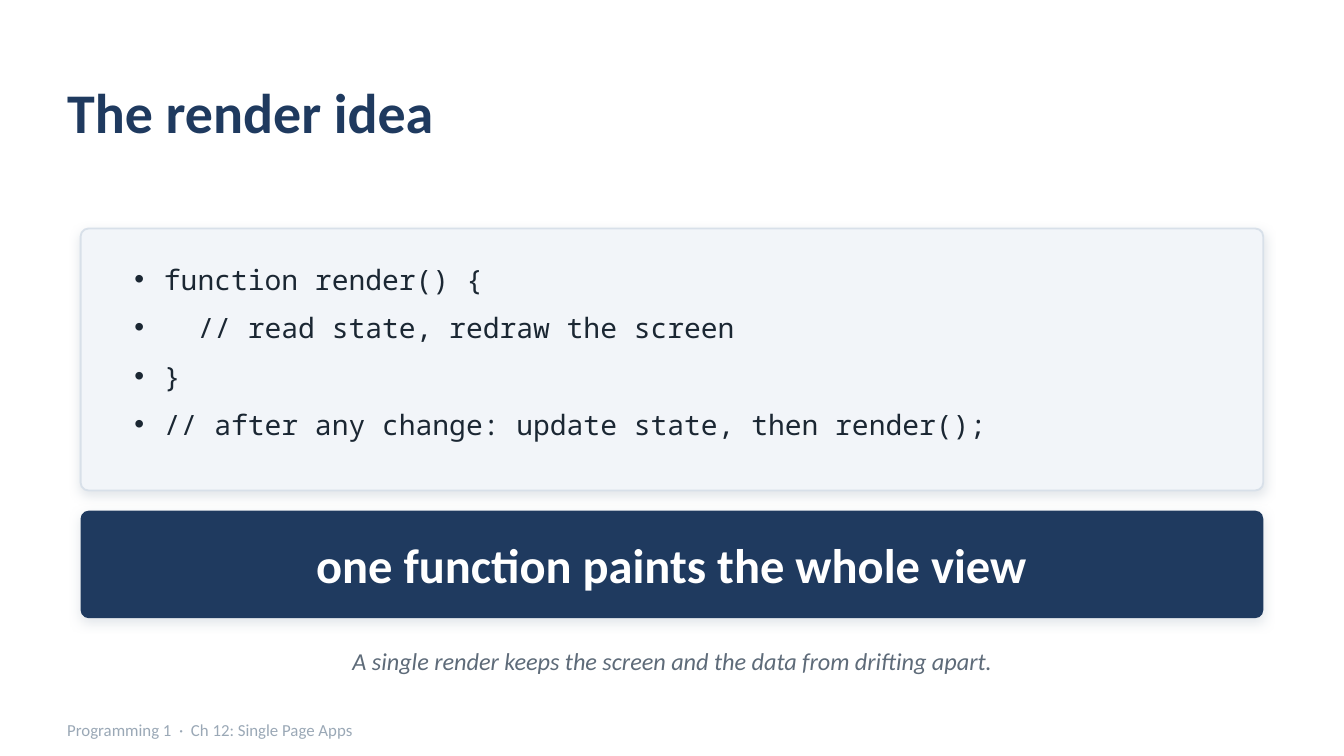
"""Build the slide that explains the idea of a single render function."""
from lxml.etree import SubElement
from pptx import Presentation
from pptx.dml.color import RGBColor
from pptx.enum.shapes import MSO_SHAPE
from pptx.enum.text import MSO_ANCHOR, MSO_AUTO_SIZE, PP_ALIGN
from pptx.oxml import parse_xml
from pptx.oxml.ns import nsdecls, qn
from pptx.util import Inches, Pt

NAVY = RGBColor(0x1F, 0x3A, 0x5F)
PALE = RGBColor(0xF2, 0xF5, 0xF9)
BORDER = RGBColor(0xD8, 0xE0, 0xE9)
INK = RGBColor(0x1B, 0x27, 0x33)
SLATE = RGBColor(0x5E, 0x6B, 0x79)
MIST = RGBColor(0x9A, 0xA8, 0xB6)
WHITE = RGBColor(0xFF, 0xFF, 0xFF)

TITLE = "The render idea"
CODE = [
    "function render() {",
    "  // read state, redraw the screen",
    "}",
    "// after any change: update state, then render();",
]
MESSAGE = "one function paints the whole view"
CAPTION = "A single render keeps the screen and the data from drifting apart."
FOOTER = "Programming 1  ·  Ch 12: Single Page Apps"

SLIDE_WIDTH = 10
SLIDE_HEIGHT = SLIDE_WIDTH * 9 / 16
CARD_LEFT, CARD_WIDTH = 0.6, 8.8
CORNER = 0.06
INDENT = Inches(0.22)


def place(shape, left, top, width, height):
    shape.left, shape.top = Inches(left), Inches(top)
    shape.width, shape.height = Inches(width), Inches(height)


def write_line(shape, text, size, color, align=PP_ALIGN.LEFT, bold=False, italic=False):
    frame = shape.text_frame
    frame.text = text
    frame.word_wrap = True
    frame.auto_size = MSO_AUTO_SIZE.NONE
    frame.vertical_anchor = MSO_ANCHOR.MIDDLE
    frame.margin_left = frame.margin_right = frame.margin_top = frame.margin_bottom = 0
    paragraph = frame.paragraphs[0]
    paragraph.alignment = align
    font = paragraph.runs[0].font
    font.name, font.size, font.bold, font.italic = "Calibri", Pt(size), bold, italic
    font.color.rgb = color


def add_card(slide, top, height, fill, border=None):
    card = slide.shapes.add_shape(
        MSO_SHAPE.ROUNDED_RECTANGLE,
        Inches(CARD_LEFT), Inches(top), Inches(CARD_WIDTH), Inches(height))
    card.adjustments[0] = CORNER / height
    card.fill.solid()
    card.fill.fore_color.rgb = fill
    if border is None:
        card.line.fill.background()
    else:
        card.line.color.rgb = border
        card.line.width = Pt(1)
    card.shadow.inherit = False
    effects = card.element.spPr.find(qn("a:effectLst"))
    effects.append(parse_xml(
        f'<a:outerShdw {nsdecls("a")} blurRad="{Pt(6)}" dist="{Pt(2)}" dir="5400000" '
        f'algn="ctr" rotWithShape="0"><a:srgbClr val="{MIST}">'
        '<a:alpha val="28000"/></a:srgbClr></a:outerShdw>'))
    return card


def write_code(body):
    frame = body.text_frame
    frame.text = "\n".join(CODE)
    frame.word_wrap = True
    frame.auto_size = MSO_AUTO_SIZE.NONE
    frame.vertical_anchor = MSO_ANCHOR.TOP
    for paragraph in frame.paragraphs:
        properties = paragraph._p.get_or_add_pPr()
        properties.set("marL", str(INDENT))
        properties.set("indent", str(-INDENT))
        SubElement(properties, qn("a:buChar")).set("char", "•")
        paragraph.space_before, paragraph.space_after = Pt(0), Pt(8)
        font = paragraph.runs[0].font
        font.name, font.size = "Noto Sans Mono", Pt(15)
        font.color.rgb = INK


def add_line(slide, box, text, size, color, **style):
    textbox = slide.shapes.add_textbox(*map(Inches, box))
    write_line(textbox, text, size, color, **style)


def main():
    deck = Presentation()
    deck.slide_width, deck.slide_height = Inches(SLIDE_WIDTH), Inches(SLIDE_HEIGHT)
    slide = deck.slides.add_slide(deck.slide_layouts[1])
    title, code = slide.placeholders

    place(title, 0.5, 0.4, 9, 0.85)
    write_line(title, TITLE, 30, NAVY, bold=True)

    code_card = add_card(slide, 1.7, 1.95, PALE, BORDER)
    code_card.element.addnext(code.element)
    place(code, 0.9, 1.9, 8.2, 1.6)
    write_code(code)

    banner = add_card(slide, 3.8, 0.8, NAVY)
    write_line(banner, MESSAGE, 26, WHITE, align=PP_ALIGN.CENTER, bold=True)

    add_line(slide, (CARD_LEFT, 4.72, CARD_WIDTH, 0.4), CAPTION, 13, SLATE,
             align=PP_ALIGN.CENTER, italic=True)
    add_line(slide, (0.5, 5.3, 8, 0.26), FOOTER, 9, MIST)
    deck.save("out.pptx")


if __name__ == "__main__":
    main()
